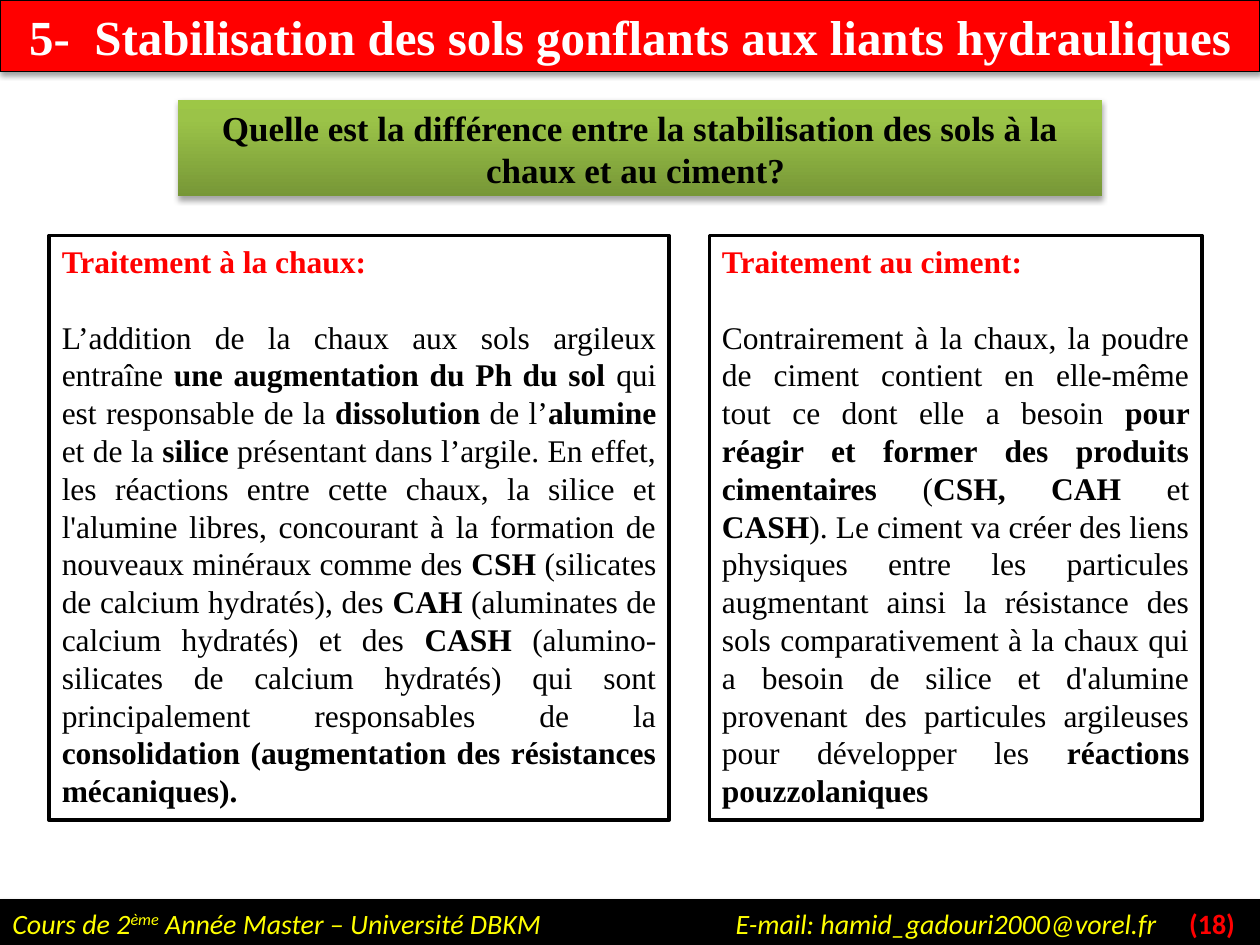
"""Build the slide comparing lime and cement treatment of swelling soils."""
from copy import deepcopy

from lxml import etree
from pptx import Presentation
from pptx.dml.color import RGBColor
from pptx.enum.shapes import MSO_SHAPE
from pptx.enum.text import MSO_ANCHOR, MSO_AUTO_SIZE, PP_ALIGN
from pptx.oxml.ns import qn
from pptx.util import Inches, Pt

RECT = MSO_SHAPE.RECTANGLE
TOP, MIDDLE = MSO_ANCHOR.TOP, MSO_ANCHOR.MIDDLE
LEFT, CENTER, JUSTIFY = PP_ALIGN.LEFT, PP_ALIGN.CENTER, PP_ALIGN.JUSTIFY
NO_FIT = MSO_AUTO_SIZE.NONE

COLORS = {"red": "FF0000", "white": "FFFFFF", "black": "000000", "yellow": "FFFF00"}
GRADIENT = [(0, "779737"), (0.8, "9BC348"), (1, "9DC746")]
SERIF, SANS = "Times New Roman", "Calibri"
W, H = 10, 7.5
PANEL_TOP, PANEL_H = 1.87, 4.64
PARA_GAP = 21.6
FOOTER_TABS = (5.74, 9.34)

TITLE = "5-  Stabilisation des sols gonflants aux liants hydrauliques"
QUESTION = "Quelle est la différence entre la stabilisation des sols à la chaux et au ciment? "
PANELS = [
    (0.39, 4.92, "Traitement à la chaux:",
     "L’addition de la chaux aux sols argileux entraîne **une augmentation du Ph du sol **"
     "qui est responsable de la **dissolution** de l’**alumine** et de la **silice** "
     "présentant dans l’argile. En effet, les réactions entre cette chaux, la silice et "
     "l'alumine libres, concourant à la formation de nouveaux minéraux comme des **CSH** "
     "(silicates de calcium hydratés), des **CAH** (aluminates de calcium hydratés) et des "
     "**CASH** (alumino-silicates de calcium hydratés) qui sont principalement responsables "
     "de la **consolidation (augmentation des résistances mécaniques).**"),
    (5.63, 3.91, "Traitement au ciment:",
     "Contrairement à la chaux, la poudre de ciment contient en elle-même tout ce dont elle "
     "a besoin **pour réagir et former des produits cimentaires **(**CSH, CAH **et **CASH**). "
     "Le ciment va créer des liens physiques entre les particules augmentant ainsi la "
     "résistance des sols comparativement à la chaux qui a besoin de silice et d'alumine "
     "provenant des particules argileuses pour développer les **réactions pouzzolaniques **"),
]
FOOTER = [
    ("Cours de 2", {}),
    ("ème", {"baseline": "30000"}),
    (" Année Master – Université DBKM\tE-mail: hamid_gadouri2000@vorel.fr\t", {}),
    ("(18)", {"color": "red", "italic": False, "bold": True}),
]


def rgb(name):
    return RGBColor.from_string(COLORS.get(name, name))


def place(sp, left, top, width, height, anchor=MIDDLE):
    sp.left, sp.top, sp.width, sp.height = map(Inches, (left, top, width, height))
    tf = sp.text_frame
    frame = {"word_wrap": True, "auto_size": NO_FIT, "vertical_anchor": anchor,
             "margin_left": Inches(0.1), "margin_right": Inches(0.1),
             "margin_top": Inches(0.05), "margin_bottom": Inches(0.05)}
    for key, value in frame.items():
        setattr(tf, key, value)
    return tf


def paint(sp, fill, line_width):
    sp.fill.solid()
    sp.fill.fore_color.rgb = rgb(fill)
    sp.line.color.rgb = rgb("black")
    sp.line.width = Pt(line_width)


def add_shadow(sp, blur, dist, alpha):
    spPr = sp._element.spPr
    for old in spPr.findall(qn("a:effectLst")):
        spPr.remove(old)
    effects = etree.SubElement(spPr, qn("a:effectLst"))
    shadow = etree.SubElement(effects, qn("a:outerShdw"), blurRad=str(Pt(blur)),
                              dist=str(Pt(dist)), dir="5400000", rotWithShape="0")
    color = etree.SubElement(shadow, qn("a:srgbClr"), val=COLORS["black"])
    etree.SubElement(color, qn("a:alpha"), val=str(alpha * 1000))


def add_run(p, text, size, color, name=SERIF, baseline=None, **style):
    r = p.add_run()
    r.text = text
    for key, value in {"size": Pt(size), "name": name, **style}.items():
        setattr(r.font, key, value)
    r.font.color.rgb = rgb(color)
    if baseline:
        r._r.get_or_add_rPr().set("baseline", baseline)


def format_paragraph(p, align, after=0):
    p.alignment, p.space_before, p.space_after = align, Pt(0), Pt(after)


def fill_gradient(sp):
    sp.fill.gradient()
    sp.fill.gradient_angle = 90
    stops = next(sp._element.spPr.iter(qn("a:gsLst")))
    stops.append(deepcopy(stops[-1]))
    for stop, (position, color) in zip(sp.fill.gradient_stops, GRADIENT):
        stop.position = position
        stop.color.rgb = rgb(color)


def add_panel(sp, left, width, heading, body):
    tf = place(sp, left, PANEL_TOP, width, PANEL_H, TOP)
    paint(sp, "white", 2)
    head, text = tf.paragraphs[0], tf.add_paragraph()
    format_paragraph(head, JUSTIFY, PARA_GAP)
    format_paragraph(text, JUSTIFY)
    for p in (head, text):
        pPr = p._p.get_or_add_pPr()
        pPr.set("marL", "0")
        pPr.set("indent", "0")
        etree.SubElement(pPr, qn("a:buNone"))
    add_run(head, heading, 18, "red", bold=True)
    for i, part in enumerate(body.split("**")):
        if part:
            add_run(text, part, 18, "black", bold=i % 2 == 1)


def add_footer(slide):
    sp = slide.shapes.add_shape(RECT, 0, 0, 0, 0)
    p = place(sp, 0, 7.14, W, 0.37).paragraphs[0]
    paint(sp, "black", 0.75)
    add_shadow(sp, 3.1, 1.6, 38)
    format_paragraph(p, LEFT)
    tabs = etree.SubElement(p._p.get_or_add_pPr(), qn("a:tabLst"))
    for pos in FOOTER_TABS:
        etree.SubElement(tabs, qn("a:tab"), pos=str(Inches(pos)), algn="l")
    base = {"size": 16, "color": "yellow", "name": SANS, "italic": True}
    for text, style in FOOTER:
        add_run(p, text, **{**base, **style})


def main():
    prs = Presentation()
    prs.slide_width, prs.slide_height = Inches(W), Inches(H)
    slide = prs.slides.add_slide(prs.slide_layouts.get_by_name("Two Content"))
    title, *bodies = list(slide.placeholders)[:3]

    p = place(title, 0, 0, W, 0.57).paragraphs[0]
    paint(title, "red", 0.75)
    add_shadow(title, 3.1, 1.6, 38)
    format_paragraph(p, CENTER)
    add_run(p, TITLE, 28, "white", bold=True)

    question = slide.shapes.add_shape(RECT, 0, 0, 0, 0)
    p = place(question, 1.41, 0.79, 7.34, 0.77).paragraphs[0]
    fill_gradient(question)
    question.line.fill.background()
    add_shadow(question, 3.1, 1.8, 35)
    format_paragraph(p, CENTER)
    add_run(p, QUESTION, 20, "black", bold=True)

    for sp, panel in zip(bodies, PANELS):
        add_panel(sp, *panel)
    add_footer(slide)
    prs.save("out.pptx")


if __name__ == "__main__":
    main()
